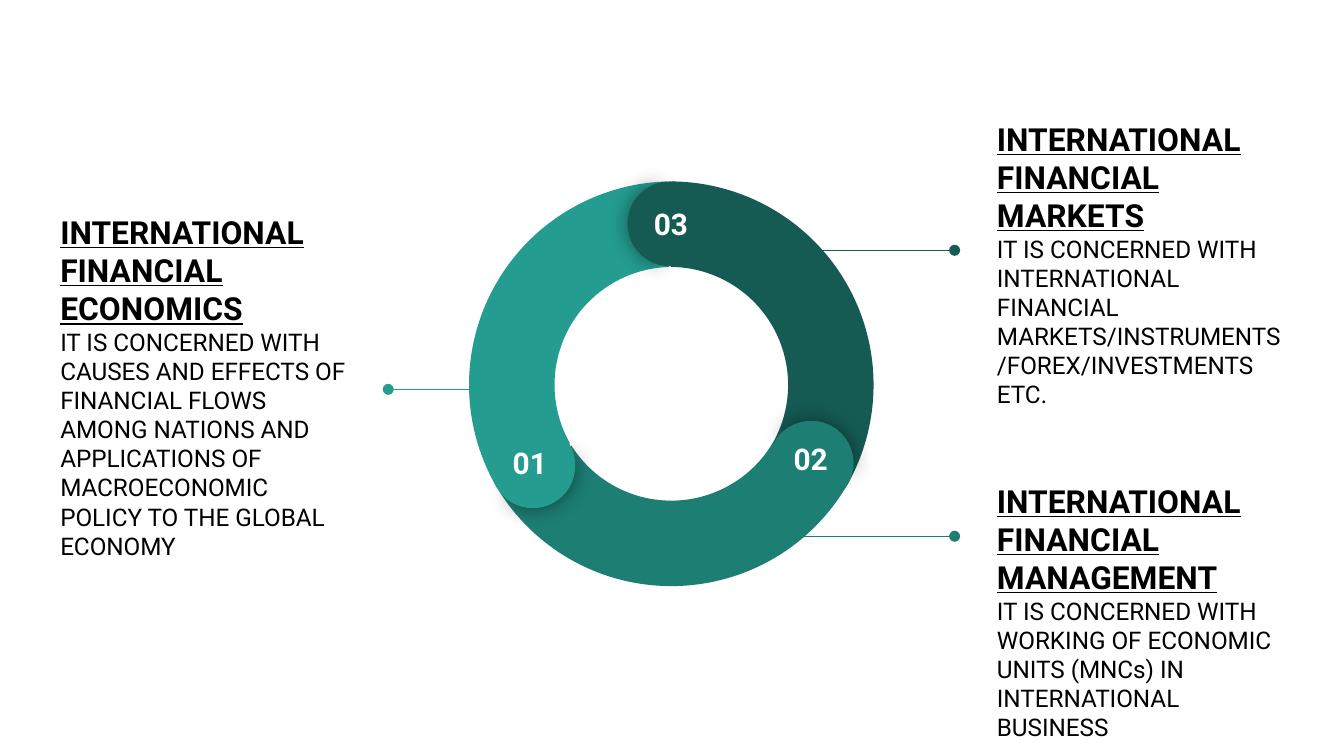
from dataclasses import dataclass
from typing import Any

from lxml.etree import SubElement
from pptx import Presentation
from pptx.dml.color import RGBColor
from pptx.enum.shapes import MSO_CONNECTOR as Connector
from pptx.enum.shapes import MSO_SHAPE as Shape
from pptx.enum.text import MSO_ANCHOR as Anchor
from pptx.enum.text import PP_ALIGN as Align
from pptx.oxml.ns import qn
from pptx.util import Pt

DARK, MIDDLE, LIGHT = "155B54", "1D7E74", "249C90"
RING_SIZE, CAP_SIZE = 218, 45.4


def color(value):
    return RGBColor.from_string(value)


@dataclass
class Painter:
    slide: Any
    font: str = "Roboto"
    inset: float = 7.2

    def text_box(self, left, top, width, height, anchor):
        shape = self.slide.shapes.add_textbox(Pt(left), Pt(top), Pt(width), Pt(height))
        frame = shape.text_frame
        frame.word_wrap = True
        frame.vertical_anchor = anchor
        frame.margin_left = frame.margin_right = Pt(self.inset)
        frame.margin_top = frame.margin_bottom = Pt(self.inset)
        return frame

    def run(self, paragraph, text, size, ink, bold=False, underline=False):
        run = paragraph.add_run()
        run.text = text
        run.font.name = self.font
        run.font.size = Pt(size)
        run.font.bold = bold
        run.font.underline = underline
        run.font.color.rgb = color(ink)

    def topic(self, left, top, height, heading, body):
        frame = self.text_box(left, top, 167, height, Anchor.MIDDLE)
        self.run(frame.paragraphs[0], heading, 17, "000000", True, True)
        paragraph = frame.add_paragraph()
        paragraph.space_after = Pt(16)
        self.run(paragraph, body, 13, "000000")

    def number(self, left, top, text):
        paragraph = self.text_box(left, top, 40.3, 20.9, Anchor.TOP).paragraphs[0]
        paragraph.alignment = Align.CENTER
        self.run(paragraph, text, 16, "FFFFFF", True)

    def pointer(self, start, end, y, ink):
        line = self.slide.shapes.add_connector(
            Connector.STRAIGHT, Pt(start), Pt(y), Pt(end), Pt(y))
        line.line.color.rgb = color(ink)
        line.line.width = Pt(0.75)
        SubElement(line.line._get_or_add_ln(), qn("a:tailEnd"), type="oval")
        SubElement(line._element.spPr, qn("a:effectLst"))

    def sector(self, kind, left, top, size, turn, adjustments, ink):
        shape = self.slide.shapes.add_shape(kind, Pt(left), Pt(top), Pt(size), Pt(size))
        shape.rotation = turn
        for index, value in enumerate(adjustments):
            shape.adjustments[index] = value
        shape.fill.solid()
        shape.fill.fore_color.rgb = color(ink)
        shape.line.fill.background()
        shape.shadow.inherit = False
        return shape

    def cap(self, left, top, turn, ink):
        edge = self.sector(Shape.PIE, left, top, CAP_SIZE, turn + 0.7, (61.9, 149.96), ink)
        effects = edge._element.spPr.find(qn("a:effectLst"))
        shadow = SubElement(effects, qn("a:outerShdw"), blurRad=str(Pt(11.2)), dist="0",
                            dir="0", algn="ctr", rotWithShape="0")
        shade = SubElement(shadow, qn("a:srgbClr"), val="000000")
        SubElement(shade, qn("a:alpha"), val="43000")
        self.sector(Shape.PIE, left, top, CAP_SIZE, (turn + 180) % 360, (40.28, 171.84), ink)


def main():
    presentation = Presentation()
    presentation.slide_width, presentation.slide_height = Pt(720), Pt(405)
    painter = Painter(presentation.slides.add_slide(presentation.slide_layouts[6]))

    topics = [
        (25.2, 156.2, 101.5, "INTERNATIONAL FINANCIAL ECONOMICS",
         "IT IS CONCERNED WITH CAUSES AND EFFECTS OF FINANCIAL FLOWS AMONG NATIONS "
         "AND APPLICATIONS OF MACROECONOMIC POLICY TO THE GLOBAL ECONOMY"),
        (527, 90.7, 101.5, "INTERNATIONAL FINANCIAL MARKETS",
         "IT IS CONCERNED WITH INTERNATIONAL FINANCIAL "
         "MARKETS/INSTRUMENTS/FOREX/INVESTMENTS ETC."),
        (527, 263.5, 128.2, "INTERNATIONAL FINANCIAL MANAGEMENT",
         "IT IS CONCERNED WITH WORKING OF ECONOMIC UNITS (MNCs) IN INTERNATIONAL BUSINESS"),
    ]
    for topic in topics:
        painter.topic(*topic)

    pointers = [(258, 208, 208.6, LIGHT), (410.4, 511.4, 134.1, DARK),
                (410.4, 511.4, 287.3, MIDDLE)]
    for pointer in pointers:
        painter.pointer(*pointer)

    arcs = [(250, 97.2, 0, 197.82, DARK), (250.6, 96, 120, 196.63, MIDDLE),
            (251.3, 97.2, 240, 197.03, LIGHT)]
    for left, top, turn, end, ink in arcs:
        painter.sector(Shape.BLOCK_ARC, left, top, RING_SIZE, turn + 60,
                       (126.22, end, 0.21), ink)

    caps = [(262.8, 226.8, 240, LIGHT), (336.2, 97.2, 0, DARK), (411.8, 225.4, 120, MIDDLE)]
    for cap in caps:
        painter.cap(*cap)

    numbers = [(339.3, 103, "03"), (263.7, 231.1, "01"), (414.2, 229, "02")]
    for number in numbers:
        painter.number(*number)

    presentation.save("out.pptx")


if __name__ == "__main__":
    main()
